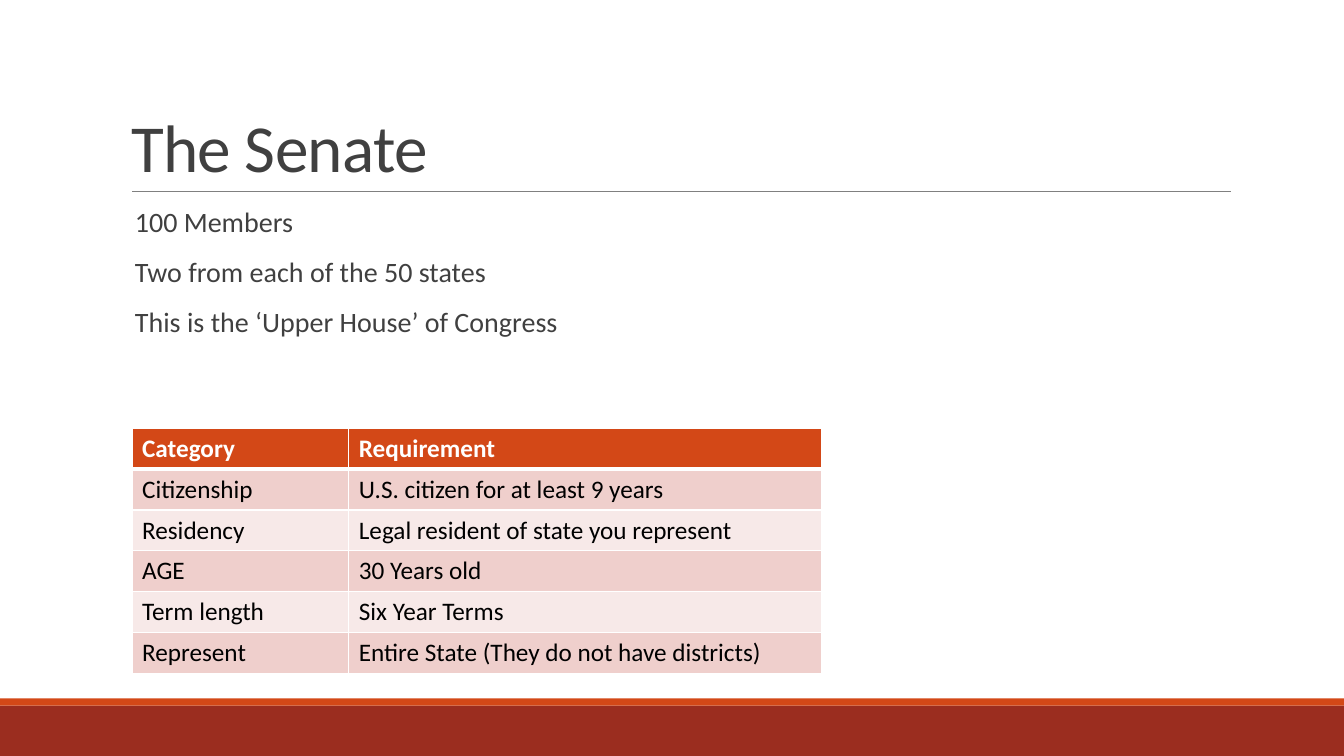
from lxml.etree import SubElement
from pptx import Presentation
from pptx.dml.color import RGBColor
from pptx.enum.shapes import MSO_CONNECTOR, MSO_SHAPE
from pptx.enum.text import MSO_ANCHOR, PP_ALIGN
from pptx.oxml.ns import qn
from pptx.util import Inches, Pt

FONT = "Calibri"
WHITE = RGBColor(0xFF, 0xFF, 0xFF)
BLACK = RGBColor(0x00, 0x00, 0x00)
TEXT = RGBColor(0x40, 0x40, 0x40)
RULE = RGBColor(0x80, 0x80, 0x80)
ORANGE = RGBColor(0xD3, 0x48, 0x17)
DARK_RED = RGBColor(0x9B, 0x2D, 0x1F)
BANDS = [RGBColor(0xEF, 0xCF, 0xCC), RGBColor(0xF7, 0xE9, 0xE8)]

FACTS = [
    "100 Members",
    "Two from each of the 50 states",
    "This is the ‘Upper House’ of Congress",
]
REQUIREMENTS = [
    ("Category", "Requirement"),
    ("Citizenship", "U.S. citizen for at least 9 years"),
    ("Residency", "Legal resident of state you represent"),
    ("AGE", "30 Years old"),
    ("Term length", "Six Year Terms"),
    ("Represent", "Entire State (They do not have districts)"),
]


def set_attrs(obj, values):
    for name, value in values.items():
        setattr(obj, name, value)


def add_run(p, text, size, color, bold=False):
    r = p.add_run()
    r.text = text
    set_attrs(r.font, {"name": FONT, "size": Pt(size), "bold": bold})
    r.font.color.rgb = color
    return r


def add_band(s, top, height, color):
    sp = s.shapes.add_shape(MSO_SHAPE.RECTANGLE, 0, Inches(top), Inches(13.33), Inches(height))
    sp.shadow.inherit = False
    sp.fill.solid()
    sp.fill.fore_color.rgb = color
    sp.line.fill.background()


def add_rule(s, left, right, y):
    line = s.shapes.add_connector(
        MSO_CONNECTOR.STRAIGHT, Inches(left), Inches(y), Inches(right), Inches(y))
    line.line.color.rgb = RULE
    line.line.width = Pt(0.5)
    SubElement(line._element.spPr, qn("a:effectLst"))


def set_title(s, text):
    sp = s.shapes.title
    set_attrs(sp, {"left": Inches(1.2), "top": Inches(0.31),
                   "width": Inches(11), "height": Inches(1.59)})
    tf = sp.text_frame
    set_attrs(tf, {"word_wrap": True, "vertical_anchor": MSO_ANCHOR.BOTTOM})
    p = tf.paragraphs[0]
    set_attrs(p, {"alignment": PP_ALIGN.LEFT, "line_spacing": 0.85})
    r = add_run(p, text, 48, TEXT)
    r.font._element.set("spc", "-50")


def add_blank_bullet(p):
    pPr = p._p.get_or_add_pPr()
    pPr.set("marL", str(Inches(0.1)))
    pPr.set("indent", str(-Inches(0.1)))
    color = SubElement(pPr, qn("a:buClr"))
    SubElement(color, qn("a:srgbClr"), val=str(ORANGE))
    SubElement(pPr, qn("a:buChar"), char=" ")


def add_facts(s, facts):
    box = s.shapes.add_textbox(Inches(1.2), Inches(2.02), Inches(11), Inches(4.4))
    tf = box.text_frame
    set_attrs(tf, {"word_wrap": True, "margin_left": 0, "margin_right": 0})
    for i, fact in enumerate(facts):
        p = tf.add_paragraph() if i else tf.paragraphs[0]
        set_attrs(p, {"line_spacing": 0.9, "space_before": Pt(12), "space_after": Pt(2)})
        add_blank_bullet(p)
        add_run(p, fact, 20, TEXT)


def set_borders(cell, widths):
    tcPr = cell._tc.get_or_add_tcPr()
    for side, width in widths.items():
        ln = SubElement(tcPr, qn(f"a:ln{side}"), w=str(Pt(width)))
        fill = SubElement(ln, qn("a:solidFill"))
        SubElement(fill, qn("a:srgbClr"), val=str(WHITE))


def add_requirements(s, rows):
    table = s.shapes.add_table(
        len(rows), 2, Inches(1.31), Inches(4.25), Inches(6.84), Inches(2.43)).table
    for column, width in zip(table.columns, (2.15, 4.69)):
        column.width = Inches(width)
    for i, row in enumerate(rows):
        header = i == 0
        for j, text in enumerate(row):
            cell = table.cell(i, j)
            set_borders(cell, {"L": 1, "R": 1, "T": 3 if i == 1 else 1, "B": 3 if header else 1})
            cell.fill.solid()
            cell.fill.fore_color.rgb = ORANGE if header else BANDS[(i - 1) % 2]
            add_run(cell.text_frame.paragraphs[0], text, 18, WHITE if header else BLACK, header)


def main():
    prs = Presentation()
    set_attrs(prs, {"slide_width": Inches(13.33), "slide_height": Inches(7.5)})
    s = prs.slides.add_slide(prs.slide_layouts[5])
    add_band(s, 7, 0.5, DARK_RED)
    add_band(s, 6.93, 0.07, ORANGE)
    add_rule(s, 1.31, 12.21, 1.9)
    set_title(s, "The Senate")
    add_facts(s, FACTS)
    add_requirements(s, REQUIREMENTS)
    prs.save("out.pptx")


if __name__ == "__main__":
    main()
